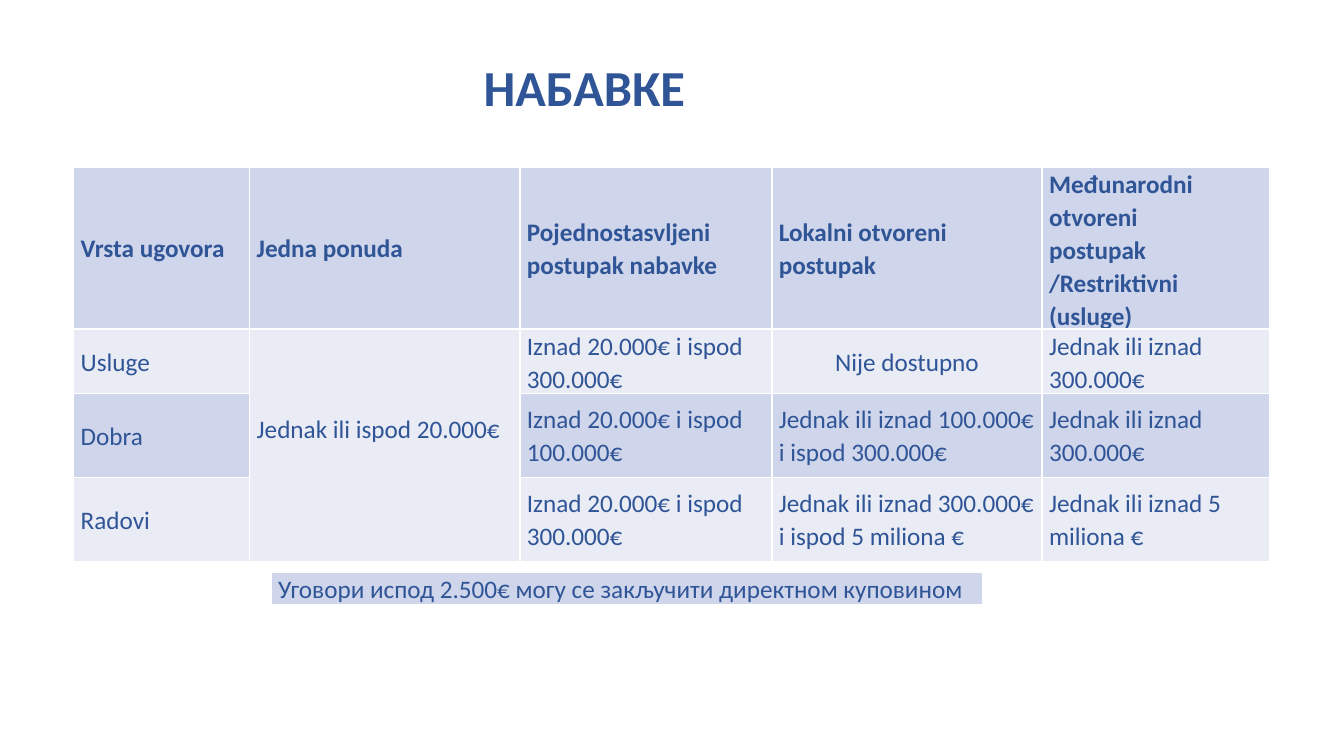
import pptx
import pptx.dml.color
import pptx.enum.text
import pptx.oxml
import pptx.oxml.ns
import pptx.util

Pt = pptx.util.Pt
ANCHOR = pptx.enum.text.MSO_ANCHOR
ALIGN = pptx.enum.text.PP_ALIGN

TITLE = "НАБАВКЕ"
SINGLE_OFFER = "Jednak ili ispod 20.000€"
UNAVAILABLE = "Nije dostupno"
PROCUREMENT = [
    ["Vrsta ugovora", "Jedna ponuda", "Pojednostasvljeni postupak nabavke",
     "Lokalni otvoreni\npostupak",
     "Međunarodni otvoreni postupak /Restriktivni (usluge)"],
    ["Usluge", SINGLE_OFFER, "Iznad 20.000€ i ispod 300.000€",
     UNAVAILABLE, "Jednak ili iznad 300.000€"],
    ["Dobra", "", "Iznad 20.000€ i ispod 100.000€",
     "Jednak ili iznad 100.000€ i ispod 300.000€", "Jednak ili iznad 300.000€"],
    ["Radovi", "", "Iznad 20.000€ i ispod 300.000€",
     "Jednak ili iznad 300.000€ i ispod 5 miliona €",
     "Jednak ili iznad 5 miliona €"],
]
NOTE = [["Уговори испод 2.500€ могу се закључити директном куповином"]]

BLUE = "2F5597"
WHITE = "FFFFFF"
BANDS = ["CFD5EA", "E9EBF5"]
BODY_FONT = {"name": "Calibri", "size": Pt(18), "bold": False}
HEADER_FONT = {**BODY_FONT, "bold": True}
TITLE_FONT = {**HEADER_FONT, "size": Pt(36)}
CELL_FORMAT = {
    "margin_left": Pt(5), "margin_right": Pt(5),
    "margin_top": 0, "margin_bottom": 0,
    "vertical_anchor": ANCHOR.MIDDLE,
}


def color(value):
    return pptx.dml.color.RGBColor.from_string(value)


def set_attributes(target, values):
    for name, value in values.items():
        setattr(target, name, value)


def write(paragraph, text, font):
    paragraph.text = text
    for run in paragraph.runs:
        set_attributes(run.font, font)
        run.font.color.rgb = color(BLUE)


def add_borders(cell):
    properties = cell._tc.get_or_add_tcPr()
    for side in ("lnL", "lnR", "lnT", "lnB"):
        properties.append(pptx.oxml.parse_xml(
            f'<a:{side} {pptx.oxml.ns.nsdecls("a")} w="{Pt(1)}"><a:solidFill>'
            f'<a:srgbClr val="{WHITE}"/></a:solidFill></a:{side}>'))


def add_table(slide, content, left, top, widths, heights, header_font):
    table = slide.shapes.add_table(
        len(heights), len(widths), Pt(left), Pt(top),
        Pt(sum(widths)), Pt(sum(heights))).table
    set_attributes(table, {"first_row": False, "horz_banding": False})
    for column, width in zip(table.columns, widths):
        column.width = Pt(width)
    for index, (row, height) in enumerate(zip(table.rows, heights)):
        row.height = Pt(height)
        for cell, text in zip(row.cells, content[index]):
            set_attributes(cell, CELL_FORMAT)
            add_borders(cell)
            cell.fill.solid()
            cell.fill.fore_color.rgb = color(BANDS[index % 2])
            paragraph = cell.text_frame.paragraphs[0]
            paragraph.line_spacing = 1.07
            if text == UNAVAILABLE:
                paragraph.alignment = ALIGN.CENTER
            write(paragraph, text, BODY_FONT if index else header_font)
    return table


def main():
    presentation = pptx.Presentation()
    set_attributes(presentation,
                   {"slide_width": Pt(960), "slide_height": Pt(540)})
    slide = presentation.slides.add_slide(presentation.slide_layouts[6])

    title = slide.shapes.add_textbox(Pt(338.4), Pt(36.7), Pt(219.6), Pt(51))
    title.text_frame.word_wrap = True
    title.text_frame.auto_size = pptx.enum.text.MSO_AUTO_SIZE.SHAPE_TO_FIT_TEXT
    write(title.text_frame.paragraphs[0], TITLE, TITLE_FONT)

    table = add_table(slide, PROCUREMENT, 52.6, 119.5,
                      [125.8, 193, 180, 193, 162.7], [115, 45.5, 59.8, 59.8],
                      HEADER_FONT)
    single_offer = table.cell(1, 1)
    single_offer.merge(table.cell(3, 1))
    single_offer.margin_bottom = Pt(23.5)

    add_table(slide, NOTE, 193.7, 409, [508.3], [23], BODY_FONT)
    presentation.save("out.pptx")


if __name__ == "__main__":
    main()
